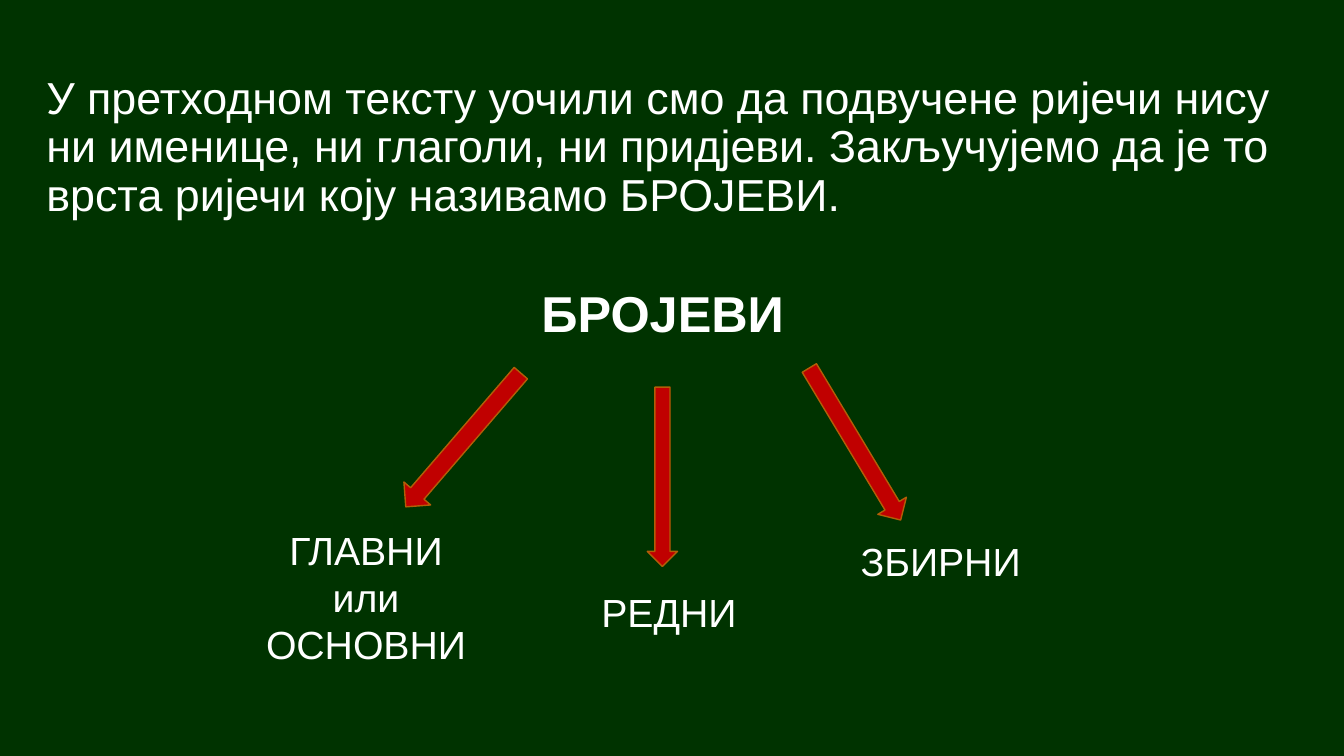
from pptx import Presentation
from pptx.dml.color import RGBColor
from pptx.enum.shapes import MSO_SHAPE
from pptx.enum.text import PP_ALIGN, MSO_ANCHOR
from pptx.oxml.ns import qn
from pptx.util import Inches, Pt
from lxml import etree

RIGHT_ARROW = MSO_SHAPE.RIGHT_ARROW
CENTER = PP_ALIGN.CENTER
LEFT = PP_ALIGN.LEFT
TOP = MSO_ANCHOR.TOP


def color(value):
    return RGBColor.from_string(value)


def add_span(para, text, size, bold=False):
    span = para.add_run()
    span.text = text
    span.font.name = "Arial"
    span.font.size = Pt(size)
    span.font.bold = bold
    span.font.color.rgb = color("FFFFFF")


deck = Presentation()
deck.slide_width = Inches(13.33)
deck.slide_height = Inches(7.5)
page = deck.slides.add_slide(deck.slide_layouts[1])
page.background.fill.solid()
page.background.fill.fore_color.rgb = color("003300")

title = page.shapes.title
title.element.getparent().remove(title.element)

body = page.placeholders[1]
body.left, body.top = Inches(0.36), Inches(0.7)
body.width, body.height = Inches(12.71), Inches(5.65)
body.text_frame.vertical_anchor = TOP

body_paragraphs = [
    ("У претходном тексту уочили смо да подвучене ријечи нису ни именице, ни глаголи, ни придјеви. "
     "Закључујемо да је то врста ријечи коју називамо БРОЈЕВИ.", 32, False, 0, 0),
    ("БРОЈЕВИ", 36, True, 4.91, 49),
]
for index, (text, size, bold, indent, space) in enumerate(body_paragraphs):
    para = body.text_frame.paragraphs[0] if index == 0 else body.text_frame.add_paragraph()
    para.alignment = LEFT
    para.line_spacing = 0.9
    para.space_before = Pt(space)
    properties = para._p.get_or_add_pPr()
    properties.set("marL", str(Inches(indent)))
    properties.set("indent", "0")
    etree.SubElement(properties, qn("a:buNone"))
    add_span(para, text, size, bold)

arrows = [
    (3.72, 4.19, 1.75, 0.35, 130.7),
    (5.68, 4.58, 1.78, 0.3, 90),
    (7.6, 4.24, 1.76, 0.33, 59),
]
for left, top, width, height, angle in arrows:
    arrow = page.shapes.add_shape(RIGHT_ARROW, Inches(left), Inches(top), Inches(width), Inches(height))
    arrow.rotation = angle
    arrow.shadow.inherit = False
    arrow.fill.solid()
    arrow.fill.fore_color.rgb = color("C00000")
    arrow.line.color.rgb = color("B25E07")
    arrow.line.width = Pt(1)

labels = [
    (2.34, 5.17, 2.58, 1.51, ["ГЛАВНИ", "или ОСНОВНИ"]),
    (5.76, 5.79, 1.75, 0.57, ["РЕДНИ"]),
    (8.25, 5.28, 2.16, 0.57, ["ЗБИРНИ"]),
]
for left, top, width, height, lines in labels:
    box = page.shapes.add_textbox(Inches(left), Inches(top), Inches(width), Inches(height))
    frame = box.text_frame
    frame.word_wrap = True
    for index, line in enumerate(lines):
        para = frame.paragraphs[0] if index == 0 else frame.add_paragraph()
        para.alignment = CENTER
        add_span(para, line, 28)

deck.save("out.pptx")
